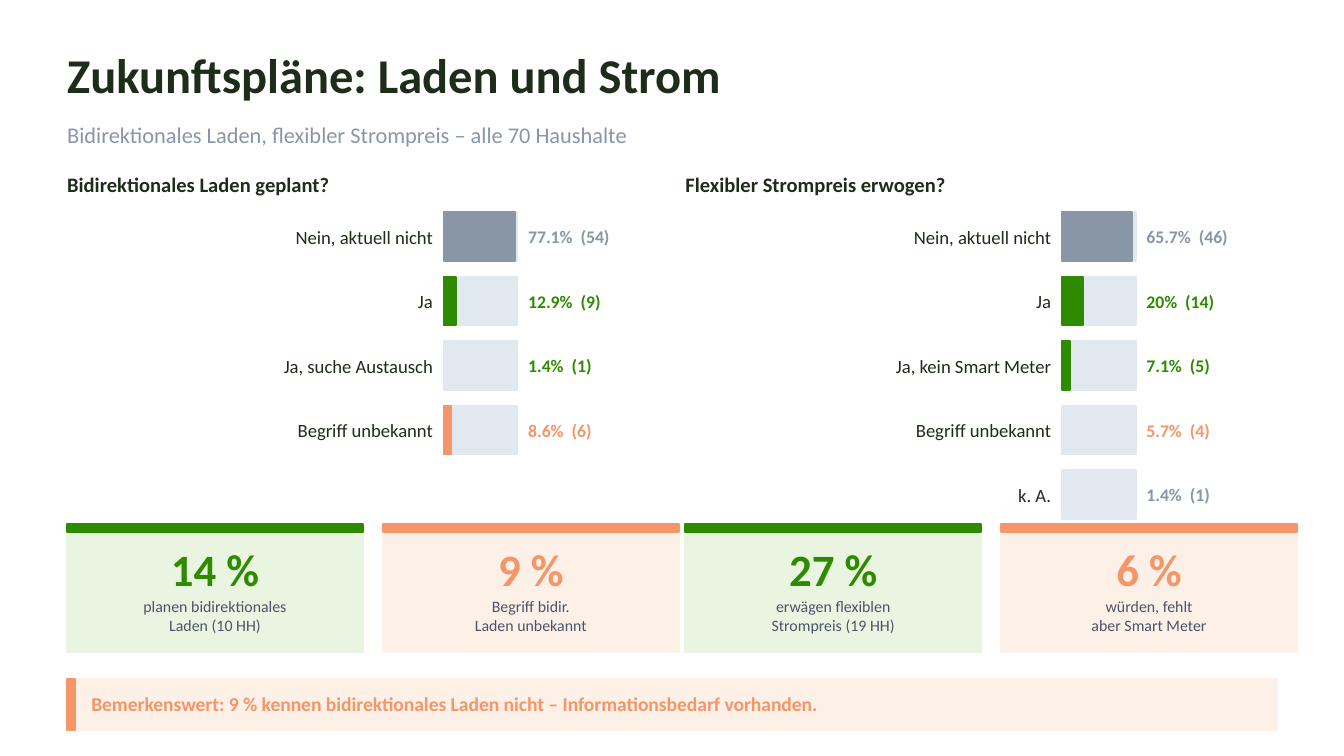
import pptx
import pptx.util
import pptx.dml.color
import pptx.enum.shapes
import pptx.enum.text

Inches = pptx.util.Inches
Align = pptx.enum.text.PP_ALIGN
Anchor = pptx.enum.text.MSO_ANCHOR

# Content
TITLE = "Zukunftspläne: Laden und Strom"
SUB = "Bidirektionales Laden, flexibler Strompreis – alle 70 Haushalte"
NOTE = "Bemerkenswert: 9 % kennen bidirektionales Laden nicht – Informationsbedarf vorhanden."
PANELS = [
    {
        "head": "Bidirektionales Laden geplant?",
        "scale": 0.69,  # inches of bar for 100 %
        "rows": [
            ("Nein, aktuell nicht", 77.1, 54, "gray"),
            ("Ja", 12.9, 9, "green"),
            ("Ja, suche Austausch", 1.4, 1, "green"),
            ("Begriff unbekannt", 8.6, 6, "coral"),
        ],
        "cards": [
            ("14 %", ["planen bidirektionales", "Laden (10 HH)"], "green"),
            ("9 %", ["Begriff bidir.", "Laden unbekannt"], "coral"),
        ],
    },
    {
        "head": "Flexibler Strompreis erwogen?",
        "scale": 0.79,
        "rows": [
            ("Nein, aktuell nicht", 65.7, 46, "gray"),
            ("Ja", 20, 14, "green"),
            ("Ja, kein Smart Meter", 7.1, 5, "green"),
            ("Begriff unbekannt", 5.7, 4, "coral"),
            ("k. A.", 1.4, 1, "gray"),
        ],
        "cards": [
            ("27 %", ["erwägen flexiblen", "Strompreis (19 HH)"], "green"),
            ("6 %", ["würden, fehlt", "aber Smart Meter"], "coral"),
        ],
    },
]

# Theme: colours and type styles (size, bold)
THEME = {
    "font": "Calibri",
    "ink": "1D2D1A", "gray": "8896A5", "text": "4A5568", "track": "E2E8F0",
    "green": "2E8B00", "coral": "F4956A",
    "pale": {"green": "E9F5E1", "coral": "FDF0E7"},
    "type": {
        "title": (26, True), "sub": (12, False), "head": (11, True),
        "label": (10, False), "value": (9.5, True), "big": (24, True),
        "small": (8.5, False), "note": (10.5, True),
    },
}
FRAME = {
    "margin_left": 0, "margin_top": 0, "margin_right": 0, "margin_bottom": 0,
    "word_wrap": True, "auto_size": pptx.enum.text.MSO_AUTO_SIZE.NONE,
}

# Layout in inches
LEFT, WIDE = 0.5, 9
PANEL_STEP, ROW_TOP, ROW_STEP = 4.6, 1.58, 0.48
BAR_X, BAR_W, BAR_H, BAR_MIN, GAP = 2.8, 0.55, 0.36, 0.05, 0.08
CARD_TOP, CARD_W, CARD_H, CARD_STEP = 3.9, 2.2, 0.95, 2.35
NOTE_TOP, NOTE_H, EDGE = 5.05, 0.38, 0.06


def rgb(code):
    return pptx.dml.color.RGBColor.from_string(code)


def apply(item, values):
    for key, value in values.items():
        setattr(item, key, value)


def style(shape, lines, kind, color, align=Align.LEFT, anchor=Anchor.MIDDLE):
    frame = shape.text_frame
    apply(frame, {**FRAME, "vertical_anchor": anchor})
    frame.text = "\n".join(lines)
    size, bold = THEME["type"][kind]
    for par in frame.paragraphs:
        par.alignment = align
        for run in par.runs:
            apply(run.font, {"name": THEME["font"], "bold": bold,
                             "size": pptx.util.Pt(size)})
            run.font.color.rgb = rgb(color)


def text(slide, box, lines, *look):
    shape = slide.shapes.add_textbox(*map(Inches, box))
    style(shape, lines, *look)


def rect(slide, box, color):
    kind = pptx.enum.shapes.MSO_SHAPE.RECTANGLE
    shape = slide.shapes.add_shape(kind, *map(Inches, box))
    shape.shadow.inherit = False
    shape.fill.solid()
    shape.fill.fore_color.rgb = rgb(color)
    shape.line.color.rgb = rgb(color)
    shape.line.width = pptx.util.Pt(1)


def draw_row(slide, x, y, scale, row):
    label, share, count, tone = row
    bar = x + BAR_X
    rect(slide, (bar, y, BAR_W, BAR_H), THEME["track"])
    width = share / 100 * scale
    if width > BAR_MIN:  # slivers stay empty
        rect(slide, (bar, y, round(width, 2), BAR_H), THEME[tone])
    text(slide, (x, y - 0.01, BAR_X - GAP, BAR_H + 0.02), [label],
         "label", THEME["ink"], Align.RIGHT)
    text(slide, (bar + BAR_W + GAP, y, 0.9, BAR_H), [f"{share}%  ({count})"],
         "value", THEME[tone])


def draw_card(slide, x, card):
    big, lines, tone = card
    rect(slide, (x, CARD_TOP, CARD_W, CARD_H), THEME["pale"][tone])
    rect(slide, (x, CARD_TOP, CARD_W, EDGE), THEME[tone])
    text(slide, (x, CARD_TOP + 0.05, CARD_W, 0.48), [big],
         "big", THEME[tone], Align.CENTER, Anchor.BOTTOM)
    text(slide, (x, CARD_TOP + 0.54, CARD_W, 0.36), lines,
         "small", THEME["text"], Align.CENTER, Anchor.TOP)


def main():
    # Widescreen page, 16 to 9
    deck = pptx.Presentation()
    apply(deck, {"slide_width": Inches(10), "slide_height": Inches(10 * 9 / 16)})
    slide = deck.slides.add_slide(deck.slide_layouts[5])

    # Title and subtitle
    title = slide.shapes.title
    apply(title, {"left": Inches(LEFT), "top": Inches(0.28),
                  "width": Inches(WIDE), "height": Inches(0.55)})
    style(title, [TITLE], "title", THEME["ink"])
    text(slide, (LEFT, 0.85, WIDE, 0.3), [SUB], "sub", THEME["gray"])

    # Panels with bars, then their cards
    for i, panel in enumerate(PANELS):
        x = LEFT + i * PANEL_STEP
        text(slide, (x, 1.22, 4.4, 0.3), [panel["head"]], "head", THEME["ink"])
        for j, row in enumerate(panel["rows"]):
            draw_row(slide, x, ROW_TOP + j * ROW_STEP, panel["scale"], row)
        for j, card in enumerate(panel["cards"]):
            draw_card(slide, x + j * CARD_STEP, card)

    # Closing note
    rect(slide, (LEFT, NOTE_TOP, WIDE, NOTE_H), THEME["pale"]["coral"])
    rect(slide, (LEFT, NOTE_TOP, EDGE, NOTE_H), THEME["coral"])
    text(slide, (LEFT + 0.18, NOTE_TOP + 0.01, 8.7, 0.36), [NOTE],
         "note", THEME["coral"])

    deck.save("out.pptx")


if __name__ == "__main__":
    main()
